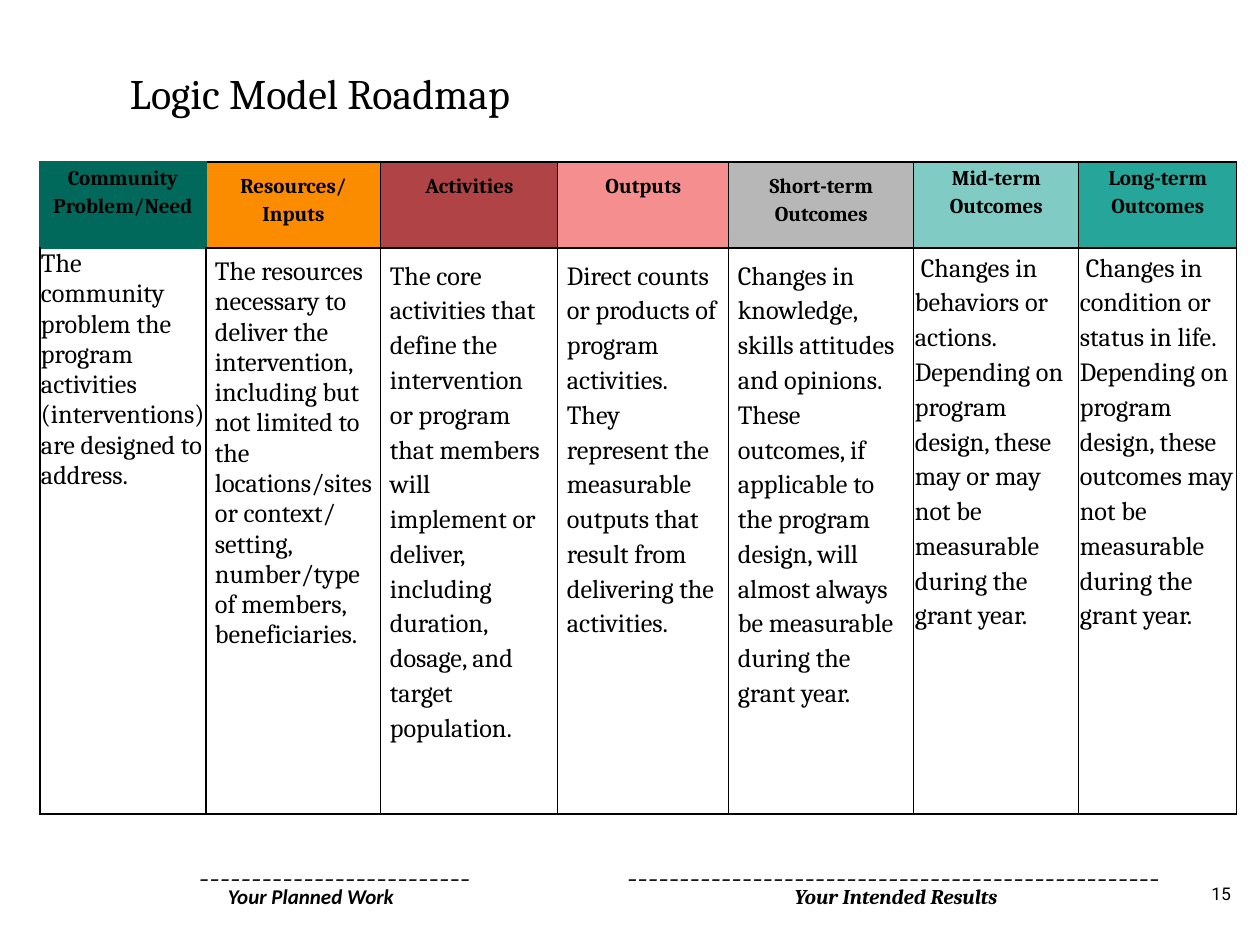
from pptx import Presentation
from pptx.dml.color import RGBColor as RGB
from pptx.enum.text import MSO_ANCHOR as Anchor, PP_ALIGN as Align
from pptx.oxml.ns import qn
from pptx.util import Pt
from lxml.etree import SubElement as Sub

BLACK = RGB(0x00, 0x00, 0x00)
PINE = RGB(0x00, 0x69, 0x5C)
AMBER = RGB(0xFB, 0x8C, 0x00)
BRICK = RGB(0xAF, 0x43, 0x45)
ROSE = RGB(0xF5, 0x8F, 0x8F)
GREY = RGB(0xB7, 0xB7, 0xB7)
MINT = RGB(0x80, 0xCB, 0xC4)
TEAL = RGB(0x26, 0xA6, 0x9A)

TIGHT, WIDE = 1, 9
STEPS = [
    (166, PINE, TIGHT, ["Community", "Problem/Need"], 1, 0,
     ["The community problem the program activities (interventions) "
      "are designed to address."]),
    (175, AMBER, WIDE, ["Resources/Inputs"], 1, 0,
     ["The resources necessary to deliver the intervention, including but "
      "not limited to the locations/sites or context/",
      "setting, number/type of members, beneficiaries."]),
    (177, BRICK, WIDE, ["Activities"], 1.15, 0,
     ["The core activities that define the intervention or program that "
      "members will implement or deliver, including duration, dosage, and "
      "target population."]),
    (171, ROSE, WIDE, ["Outputs"], 1.15, 0,
     ["Direct counts or products of program activities. They represent the "
      "measurable outputs that result from delivering the activities."]),
    (185, GREY, WIDE, ["Short-term Outcomes"], 1.15, 0,
     ["Changes in knowledge, skills attitudes and opinions. These outcomes, "
      "if applicable to the program design, will almost always be measurable "
      "during the grant year."]),
    (165, MINT, TIGHT, ["Mid-term Outcomes"], 1.15, 6,
     ["Changes in behaviors or actions. Depending on program design, these "
      "may or may not be measurable during the grant year."]),
    (158, TEAL, TIGHT, ["Long-term", "Outcomes"], 1.15, 6,
     ["Changes in condition or status in life. Depending on program design, "
      "these outcomes may not be measurable during the grant year."]),
]


class Deck:
    """Holds the style and the current slide, and adds each kind of element."""

    scale = 914400 / 126
    face = "Cambria"
    ink = BLACK
    rule = Pt(0.75)

    def __init__(self, wide, high):
        self.show = Presentation()
        self.show.slide_width = self.emu(wide)
        self.show.slide_height = self.emu(high)
        self.slide = self.show.slides.add_slide(self.show.slide_layouts[6])

    def emu(self, px):
        return round(px * self.scale)

    def fill_in(self, frame, lines, size, face=None, bold=False, slant=False,
                align=Align.LEFT, lead=None):
        for i, line in enumerate(lines):
            para = frame.paragraphs[0] if i == 0 else frame.add_paragraph()
            para.text = line
            para.alignment = align
            if lead:
                para.line_spacing = lead
            font = para.font
            font.name, font.size = face or self.face, Pt(size)
            font.bold, font.italic = bold, slant
            font.color.rgb = self.ink

    def indent(self, para, left=0, first=0):
        props = para._p.get_or_add_pPr()
        props.set("marL", str(self.emu(left)))
        props.set("indent", str(self.emu(first)))

    def text(self, x, y, w, h, lines, size, pad=6, anchor=Anchor.TOP, **look):
        frame = self.slide.shapes.add_textbox(
            *map(self.emu, (x, y, w, h))).text_frame
        frame.word_wrap = True
        frame.vertical_anchor = anchor
        frame.margin_left = frame.margin_right = self.emu(13)
        frame.margin_top = frame.margin_bottom = self.emu(pad)
        self.fill_in(frame, lines, size, **look)
        return frame

    def table(self, x, y, cols, rows):
        grid = self.slide.shapes.add_table(
            len(rows), len(cols),
            *map(self.emu, (x, y, sum(cols), sum(rows)))).table
        grid.first_row = grid.horz_banding = False
        for col, px in zip(grid.columns, cols):
            col.width = self.emu(px)
        for row, px in zip(grid.rows, rows):
            row.height = self.emu(px)
        return grid

    def cell(self, cell, lines, size, pad, fill=None, edges=None, **look):
        cell.margin_left = cell.margin_right = self.emu(pad)
        cell.margin_top = cell.margin_bottom = self.emu(pad)
        props = cell._tc.get_or_add_tcPr()
        for side in "LRTB":
            line = Sub(props, qn("a:ln" + side), w=str(self.rule))
            paint = Sub(line, qn("a:solidFill"))
            tint = (edges or {}).get(side, BLACK)
            Sub(paint, qn("a:srgbClr"), val=str(tint))
        if fill is None:
            cell.fill.background()
        else:
            cell.fill.solid()
            cell.fill.fore_color.rgb = fill
        self.fill_in(cell.text_frame, lines, size, **look)

    def save(self):
        self.show.save("out.pptx")


def main():
    deck = Deck(1260, 945)
    deck.text(1168, 857, 76, 72, ["15"], 10, anchor=Anchor.MIDDLE,
              face="Roboto", align=Align.RIGHT)

    grid = deck.table(40, 162, [step[0] for step in STEPS], [86, 566])
    heads = {0: dict.fromkeys("LRTB", PINE), 1: {"L": PINE}}
    for i, (_, fill, pad, head, lead, first, body) in enumerate(STEPS):
        deck.cell(grid.cell(0, i), head, 12, pad, fill, heads.get(i),
                  bold=True, align=Align.CENTER, lead=1.15)
        cell = grid.cell(1, i)
        deck.cell(cell, body, 15, pad, edges={"T": PINE} if i == 0 else None,
                  lead=lead)
        if first:
            deck.indent(cell.text_frame.paragraphs[0], first=first)

    deck.text(117, 55, 1157, 77, ["Logic Model Roadmap"], 24, pad=13)

    look = dict(face="Calibri", bold=True, slant=True)
    plan = deck.text(40, 852, 518, 77, ["_" * 26, "Your Planned Work"],
                     12, **look)
    for para, left in zip(plan.paragraphs, (147, 175)):
        deck.indent(para, left)
    goal = deck.text(615, 852, 562, 66, ["_" * 51, "Your Intended Results"],
                     12, **look)
    goal.paragraphs[1].alignment = Align.CENTER
    goal.paragraphs[1].font.name = deck.face
    deck.save()


if __name__ == "__main__":
    main()
